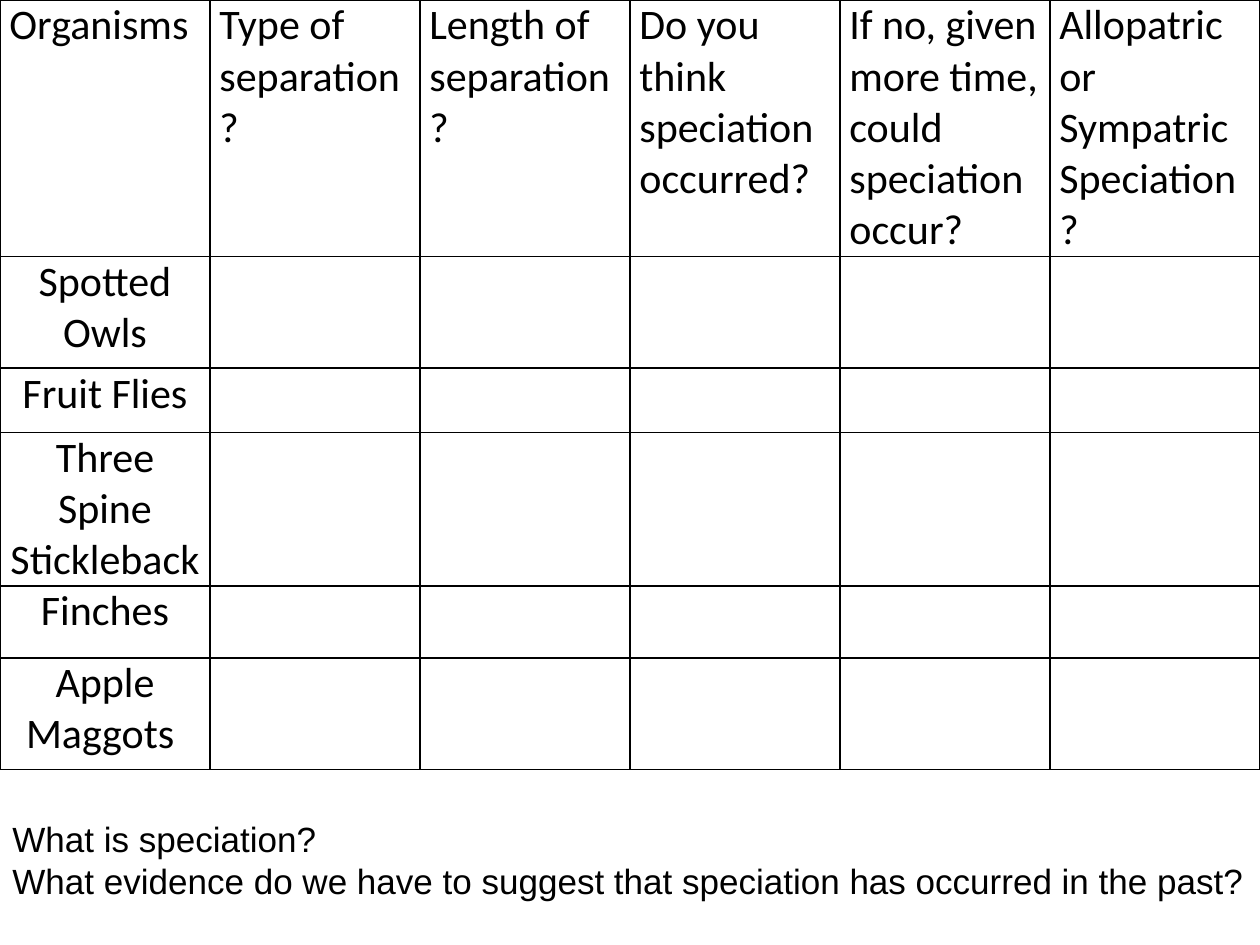
from lxml import etree
from pptx import Presentation
from pptx.dml.color import RGBColor
from pptx.enum.text import MSO_ANCHOR, PP_ALIGN
from pptx.oxml.ns import qn
from pptx.util import Pt

COLORS = {"ink": "000000", "paper": "FFFFFF"}
HEADERS = [
    "Organisms",
    "Type of separation?",
    "Length of separation?",
    "Do you think speciation occurred?",
    "If no, given more time, could speciation occur?",
    "Allopatric or Sympatric Speciation?",
]
ORGANISMS = [
    ("Spotted Owls", 64),
    ("Fruit Flies", 36.6),
    ("Three Spine Stickleback", 64),
    ("Finches", 41),
    ("Apple Maggots ", 64),
]
QUESTIONS = [
    "What is speciation?",
    "What evidence do we have to suggest that speciation has occurred in the past?",
]


class SlideBuilder:
    def __init__(self, slide, colors):
        self.slide = slide
        self.colors = colors

    def rgb(self, name):
        return RGBColor.from_string(self.colors[name])

    def paragraph(self, p, text, font, size, align=PP_ALIGN.LEFT):
        p.text = text
        p.alignment = align
        p.font.name = font
        p.font.size = Pt(size)
        p.font.bold = False
        p.font.color.rgb = self.rgb("ink")

    def border(self, cell, width=1):
        tc_pr = cell._tc.get_or_add_tcPr()
        for i, side in enumerate(("lnL", "lnR", "lnT", "lnB")):
            ln = etree.Element(qn(f"a:{side}"), w=str(Pt(width)))
            fill = etree.SubElement(ln, qn("a:solidFill"))
            etree.SubElement(fill, qn("a:srgbClr"), val=self.colors["ink"])
            tc_pr.insert(i, ln)

    def table(self, rows, heights, left, top, width):
        frame = self.slide.shapes.add_table(
            len(rows), len(rows[0]), Pt(left), Pt(top), Pt(width), Pt(sum(heights))
        )
        table = frame.table
        table.horz_banding = False
        for r, (row, height) in enumerate(zip(rows, heights)):
            table.rows[r].height = Pt(height)
            for c, text in enumerate(row):
                cell = table.cell(r, c)
                cell.margin_left = cell.margin_right = Pt(5.4)
                cell.margin_top = cell.margin_bottom = 0
                cell.fill.solid()
                cell.fill.fore_color.rgb = self.rgb("paper")
                self.border(cell)
                if text:
                    align = PP_ALIGN.CENTER if r else PP_ALIGN.LEFT
                    p = cell.text_frame.paragraphs[0]
                    self.paragraph(p, text, "Calibri", 24, align)

    def text(self, lines, left, top, width, height):
        box = self.slide.shapes.add_textbox(Pt(left), Pt(top), Pt(width), Pt(height))
        tf = box.text_frame
        tf.word_wrap = True
        tf.vertical_anchor = MSO_ANCHOR.TOP
        tf.margin_top = Pt(5.4)
        for i, line in enumerate(lines):
            p = tf.add_paragraph() if i else tf.paragraphs[0]
            self.paragraph(p, line, "Arial", 20)


def main():
    prs = Presentation()
    prs.slide_width, prs.slide_height = Pt(720), Pt(540)
    s = SlideBuilder(prs.slides.add_slide(prs.slide_layouts[6]), COLORS)
    blanks = [""] * (len(HEADERS) - 1)
    rows = [HEADERS] + [[name] + blanks for name, _ in ORGANISMS]
    heights = [136] + [height for _, height in ORGANISMS]
    s.table(rows, heights, 0, 0, 720)
    s.text(QUESTIONS, 0, 461.5, 728.6, 77.8)
    prs.save("out.pptx")


if __name__ == "__main__":
    main()
